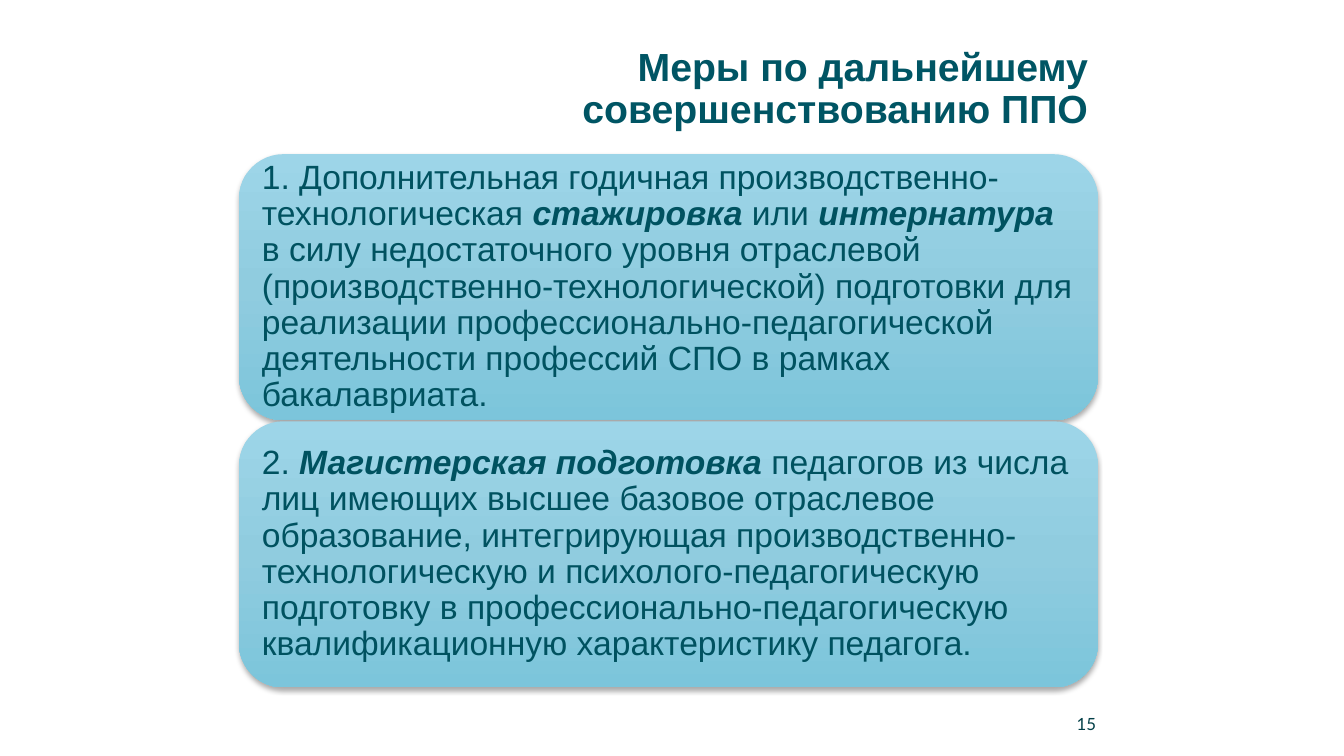
from copy import deepcopy
from dataclasses import dataclass

from lxml import etree
from pptx import Presentation
from pptx.dml.color import RGBColor
from pptx.enum import shapes, text
from pptx.oxml import ns
from pptx.util import Inches, Pt

TEAL = RGBColor(0x00, 0x55, 0x64)
INK = RGBColor(0x00, 0x52, 0x60)
DARK = RGBColor(0x02, 0x3F, 0x47)
SHADES = (RGBColor(0x9D, 0xD5, 0xE8), RGBColor(0x90, 0xCC, 0xDF),
          RGBColor(0x7C, 0xC5, 0xDB))
LEFT, TOP, WIDTH, HEIGHT, STEP = 2.37, 1.53, 8.52, 2.64, 2.65


@dataclass
class Part:
    words: str
    strong: bool = False


CARDS = (
    (Part("1. Дополнительная годичная производственно-технологическая "),
     Part("стажировка ", True),
     Part("или "),
     Part("интернатура ", True),
     Part("в силу недостаточного уровня отраслевой "
          "(производственно-технологической) подготовки для реализации "
          "профессионально-педагогической деятельности профессий СПО "
          "в рамках бакалавриата.")),
    (Part("2. "),
     Part("Магистерская подготовка ", True),
     Part("педагогов из числа лиц имеющих высшее базовое отраслевое "
          "образование, интегрирующая производственно-технологическую и "
          "психолого-педагогическую подготовку в "
          "профессионально-педагогическую квалификационную "
          "характеристику педагога.")),
)


def style(item, **values) -> None:
    for name, value in values.items():
        setattr(item, name, value)


def place(shape, left: float, top: float, width: float, height: float) -> None:
    style(shape, left=Inches(left), top=Inches(top),
          width=Inches(width), height=Inches(height))


def write(para, part: Part, size: int, color: RGBColor, **values) -> None:
    run = para.add_run()
    run.text = part.words
    style(run.font, **{"name": "Arial", "size": Pt(size), **values})
    run.font.color.rgb = color


def shade(shape) -> None:
    """Give the card its three-stop gradient and soft shadow."""
    fill = shape.fill
    fill.gradient()
    fill.gradient_angle = 270
    stops = shape._element.spPr.find(ns.qn("a:gradFill")).find(ns.qn("a:gsLst"))
    stops.insert(1, deepcopy(stops[0]))
    for i, (stop, color) in enumerate(zip(fill.gradient_stops, SHADES)):
        stop.position = i / 2
        stop.color.rgb = color

    shape.shadow.inherit = False
    effects = shape._element.spPr.find(ns.qn("a:effectLst"))
    outer = etree.SubElement(effects, ns.qn("a:outerShdw"), blurRad=str(Pt(3.5)),
                             dist=str(Pt(2.2)), dir="5400000", rotWithShape="0")
    black = etree.SubElement(outer, ns.qn("a:srgbClr"), val="000000")
    etree.SubElement(black, ns.qn("a:alpha"), val="32000")


def card(slide, row: int, parts: tuple[Part, ...]) -> None:
    shape = slide.shapes.add_shape(
        shapes.MSO_SHAPE.ROUNDED_RECTANGLE, Inches(LEFT),
        Inches(TOP + row * STEP), Inches(WIDTH), Inches(HEIGHT))
    shade(shape)
    shape.line.fill.background()
    frame = shape.text_frame
    inset = Inches(0.1)
    style(frame, word_wrap=True, vertical_anchor=text.MSO_ANCHOR.MIDDLE,
          margin_left=inset, margin_right=inset,
          margin_top=inset, margin_bottom=inset)
    para = frame.paragraphs[0]
    style(para, alignment=text.PP_ALIGN.LEFT, line_spacing=0.9)
    for part in parts:
        write(para, part, 24, INK, bold=part.strong, italic=part.strong)


def main() -> None:
    deck = Presentation()
    style(deck, slide_width=Inches(13.33), slide_height=Inches(7.5))
    slide = deck.slides.add_slide(deck.slide_layouts[5])

    # Title
    title = slide.shapes.title
    place(title, 3.9, 0.42, 6.99, 1.32)
    style(title.text_frame, word_wrap=True, auto_size=text.MSO_AUTO_SIZE.NONE,
          vertical_anchor=text.MSO_ANCHOR.TOP)
    para = title.text_frame.paragraphs[0]
    style(para, alignment=text.PP_ALIGN.RIGHT, line_spacing=0.9)
    write(para, Part("Меры по дальнейшему совершенствованию ППО"), 28, TEAL,
          bold=True)

    # Measures
    for row, parts in enumerate(CARDS):
        card(slide, row, parts)

    # Page number
    page = slide.shapes.add_textbox(0, 0, 0, 0)
    place(page, 10.33, 6.95, 0.64, 0.46)
    style(page.text_frame, word_wrap=True,
          vertical_anchor=text.MSO_ANCHOR.MIDDLE)
    para = page.text_frame.paragraphs[0]
    para.alignment = text.PP_ALIGN.RIGHT
    write(para, Part("15"), 12, DARK, name="Lato")

    deck.save("out.pptx")


if __name__ == "__main__":
    main()
